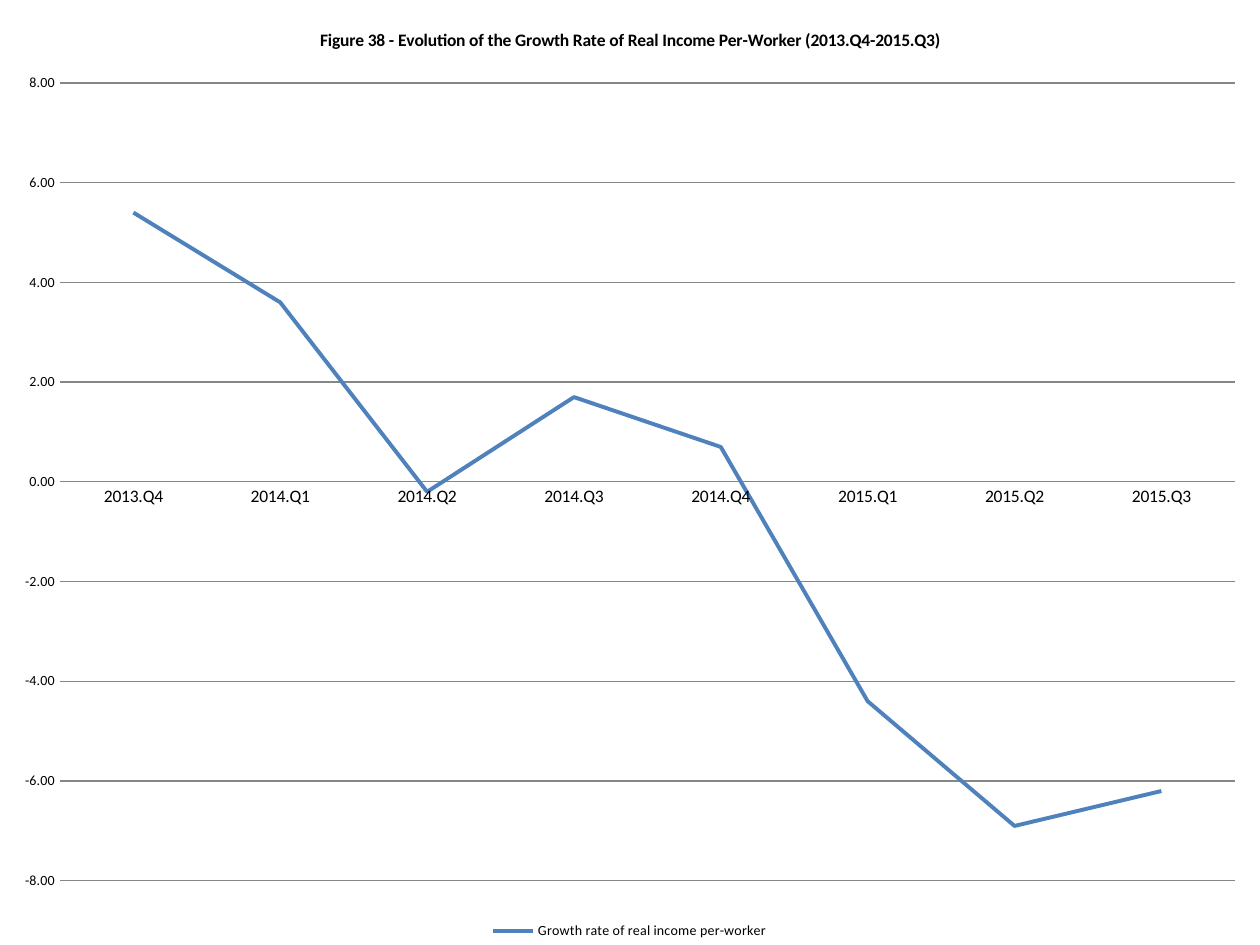
from pptx import Presentation
from pptx.chart.data import CategoryChartData as Data
from pptx.dml.color import RGBColor as RGB
from pptx.enum.chart import XL_CHART_TYPE as Kind, XL_LEGEND_POSITION as Pos
from pptx.enum.chart import XL_TICK_MARK as Tick
from pptx.oxml import parse_xml
from pptx.oxml.ns import nsdecls, qn
from pptx.util import Pt

PX = 914400 / 126
WIDE, HIGH = 1260, 945
FACE = "Calibri"
COLORS = {"text": "000000", "grid": "868686", "line": "4F81BD"}

TITLE = "Figure 38 - Evolution of the Growth Rate of Real Income Per-Worker (2013.Q4-2015.Q3)"
NAME = "Growth rate of real income per-worker"
RATES = {
    "2013.Q4": 5.4, "2014.Q1": 3.6, "2014.Q2": -0.2, "2014.Q3": 1.7,
    "2014.Q4": 0.7, "2015.Q1": -4.4, "2015.Q2": -6.9, "2015.Q3": -6.2,
}


def emu(px):
    return round(px * PX)


def style(item, values):
    for key, value in values.items():
        setattr(item, key, value)


def set_font(font, size, bold=False):
    style(font, {"name": FACE, "size": Pt(size), "bold": bold})
    font.color.rgb = RGB.from_string(COLORS["text"])


def set_line(line, color, width):
    line.color.rgb = RGB.from_string(COLORS[color])
    line.width = Pt(width)


def set_plot(chart, box, plot):
    """Fix the inner plot area, given in px, inside the chart box."""
    wide, high = box[2:]
    parts = zip("xywh", plot, (wide, high, wide, high))
    sizes = "".join(f'<c:{key} val="{px / full:.4f}"/>' for key, px, full in parts)
    area = chart._chartSpace.chart.plotArea
    for old in area.findall(qn("c:layout")):
        area.remove(old)
    area.insert(0, parse_xml(
        f'<c:layout {nsdecls("c")}><c:manualLayout><c:layoutTarget val="inner"/>'
        f'<c:xMode val="edge"/><c:yMode val="edge"/>{sizes}'
        "</c:manualLayout></c:layout>"))


def add_rates(slide, box):
    data = Data(number_format="0.00")
    data.categories = list(RATES)
    data.add_series(NAME, list(RATES.values()))
    chart = slide.shapes.add_chart(Kind.LINE, *map(emu, box), data).chart
    set_font(chart.font, 10)

    # Title
    chart.has_title = True
    frame = chart.chart_title.text_frame
    frame.text = TITLE
    set_font(frame.paragraphs[0].runs[0].font, 10, True)
    chart.chart_title.include_in_layout = False

    # Legend
    chart.has_legend = True
    style(chart.legend, {"position": Pos.BOTTOM, "include_in_layout": False})
    set_font(chart.legend.font, 8)

    # Axes
    cat, val = chart.category_axis, chart.value_axis
    ticks = {"major_tick_mark": Tick.NONE, "minor_tick_mark": Tick.NONE}
    style(cat, ticks | {"has_major_gridlines": False})
    style(val, ticks | {"minimum_scale": -8, "maximum_scale": 8,
                        "major_unit": 2, "has_major_gridlines": True})
    set_font(cat.tick_labels.font, 10)
    set_font(val.tick_labels.font, 8)
    style(val.tick_labels, {"number_format": "0.00", "number_format_is_linked": False})
    set_line(cat.format.line, "grid", 0.75)
    set_line(val.major_gridlines.format.line, "grid", 0.75)
    val.format.line.fill.background()

    # Series
    series = chart.plots[0].series[0]
    series.smooth = False
    set_line(series.format.line, "line", 2.25)
    chart.plots[0].vary_by_categories = False
    set_plot(chart, box, (60, 83, 1175, 798))


def main():
    deck = Presentation()
    style(deck, {"slide_width": emu(WIDE), "slide_height": emu(HIGH)})
    slide = deck.slides.add_slide(deck.slide_layouts[6])
    add_rates(slide, (0, 0, WIDE, HIGH))
    deck.save("out.pptx")


if __name__ == "__main__":
    main()
